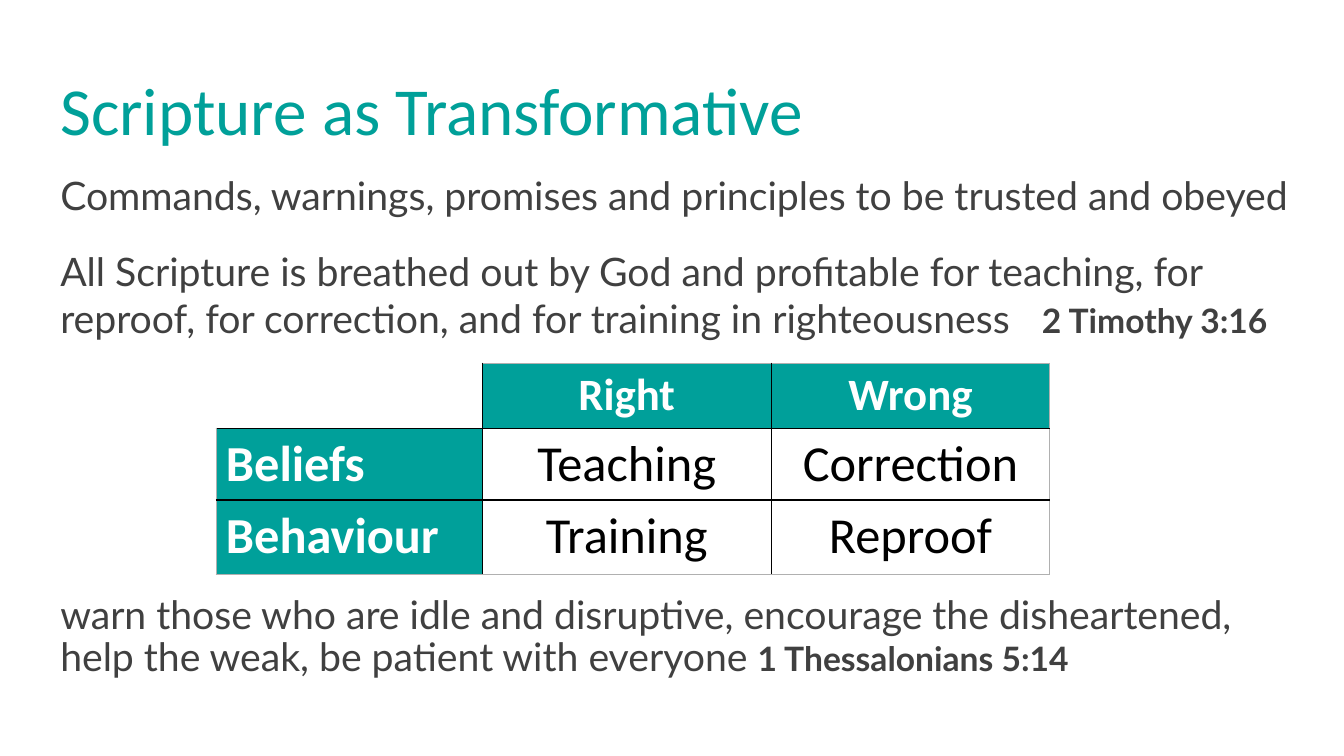
from pptx import Presentation
from pptx import util as u
from pptx.dml import color
from pptx.enum import text
from pptx.oxml import ns, xmlchemy

TEAL, GREY, WHITE, BLACK = "00A09A", "404040", "FFFFFF", "000000"
TITLE = {"name": "Calibri", "size": u.Pt(48), "color": "00A099"}
BODY = {"name": "Lato", "size": u.Pt(28), "color": GREY}
CITATION = {**BODY, "size": u.Pt(24), "bold": True}
GAP = {**BODY, "size": u.Pt(32)}
HEADER = {"name": "Calibri", "size": u.Pt(32), "bold": True, "color": WHITE}
LABEL = {**HEADER, "size": u.Pt(36)}
CELL = {**LABEL, "bold": False, "color": BLACK}
ROWS = [["", "Right", "Wrong"],
        ["Beliefs", "Teaching", "Correction"],
        ["Behaviour", "Training", "Reproof"]]


def rgb(value):
    """Turn a hex string into a colour."""
    return color.RGBColor.from_string(value)


def add_run(p, content, fmt):
    """Add a formatted run to a paragraph."""
    r = p.add_run()
    r.text = content
    for key, value in fmt.items():
        if key == "color":
            r.font.color.rgb = rgb(value)
        else:
            setattr(r.font, key, value)


def add_tab_stop(p, position):
    """Give a paragraph one left tab stop."""
    tabs = xmlchemy.OxmlElement("a:tabLst")
    tab = xmlchemy.OxmlElement("a:tab")
    tab.set("pos", str(position))
    tab.set("algn", "l")
    tabs.append(tab)
    p._p.get_or_add_pPr().append(tabs)


def add_text(s, box, paragraphs, anchor=text.MSO_ANCHOR.TOP, tab=None):
    """Add a wrapped text box of paragraphs made of runs."""
    tf = s.shapes.add_textbox(*map(u.Cm, box)).text_frame
    tf.word_wrap = True
    tf.vertical_anchor = anchor
    for i, runs in enumerate(paragraphs):
        p = tf.add_paragraph() if i else tf.paragraphs[0]
        if tab and i:
            add_tab_stop(p, u.Cm(tab))
        p.line_spacing = 0.9
        p.space_before = u.Pt(24 if i else 0)
        for content, fmt in runs:
            add_run(p, content, fmt)


def add_border(cell, side, line_color, width):
    """Draw one side of a table cell."""
    ln = xmlchemy.OxmlElement(f"a:ln{side}")
    ln.set("w", str(u.Pt(width)))
    fill = xmlchemy.OxmlElement("a:solidFill")
    clr = xmlchemy.OxmlElement("a:srgbClr")
    clr.set("val", line_color)
    fill.append(clr)
    ln.append(fill)
    cell._tc.get_or_add_tcPr().append(ln)


def style_cell(cell, row, col):
    """Set borders, fill and text of the cell at a row and column."""
    outer = {"L": col == 0, "R": col == 2, "T": row == 0, "B": row == 2}
    corner = row == col == 0
    for side, on_edge in outer.items():
        if not on_edge:
            add_border(cell, side, BLACK, 1)
        elif not corner:
            add_border(cell, side, "B0B0B0", 0.25)
    if corner:
        cell.fill.background()
        return
    cell.fill.solid()
    cell.fill.fore_color.rgb = rgb(WHITE if row and col else TEAL)
    p = cell.text_frame.paragraphs[0]
    p.alignment = text.PP_ALIGN.CENTER if col else text.PP_ALIGN.LEFT
    add_run(p, ROWS[row][col], CELL if row and col else LABEL if row else HEADER)


def add_grid(s, left, top, widths, heights):
    """Add the table of beliefs and behaviour."""
    tbl = s.shapes.add_table(
        len(heights), len(widths), u.Cm(left), u.Cm(top),
        u.Cm(sum(widths)), u.Cm(sum(heights))).table
    for column, width in zip(tbl.columns, widths):
        column.width = u.Cm(width)
    for row, height in enumerate(heights):
        tbl.rows[row].height = u.Cm(height)
        for col in range(len(widths)):
            style_cell(tbl.cell(row, col), row, col)


def main():
    """Build and save the slide."""
    prs = Presentation()
    prs.slide_width, prs.slide_height = u.Cm(33.87), u.Cm(19.05)
    s = prs.slides.add_slide(prs.slide_layouts[6])
    add_text(s, (1.27, 1.02, 31.42, 3.68),
             [[("Scripture as Transformative", TITLE)]], text.MSO_ANCHOR.MIDDLE)
    add_text(s, (1.27, 4.32, 31.72, 4.6), [
        [("Commands, warnings, promises and principles to be trusted and obeyed", BODY)],
        [("All Scripture is breathed out by God and profitable for teaching, for "
          "reproof, for correction, and for training in righteousness", BODY),
         ("\t", GAP), ("2 Timothy 3:16", CITATION)]], tab=24.74)
    add_grid(s, 5.44, 9.14, (6.71, 7.29, 7.01), (1.65, 1.81, 1.87))
    add_text(s, (1.27, 14.88, 31.72, 3), [
        [("warn those who are idle and disruptive, encourage the disheartened, "
          "help the weak, be patient with everyone ", BODY),
         ("1 Thessalonians 5:14", CITATION)]])
    prs.save("out.pptx")


if __name__ == "__main__":
    main()
